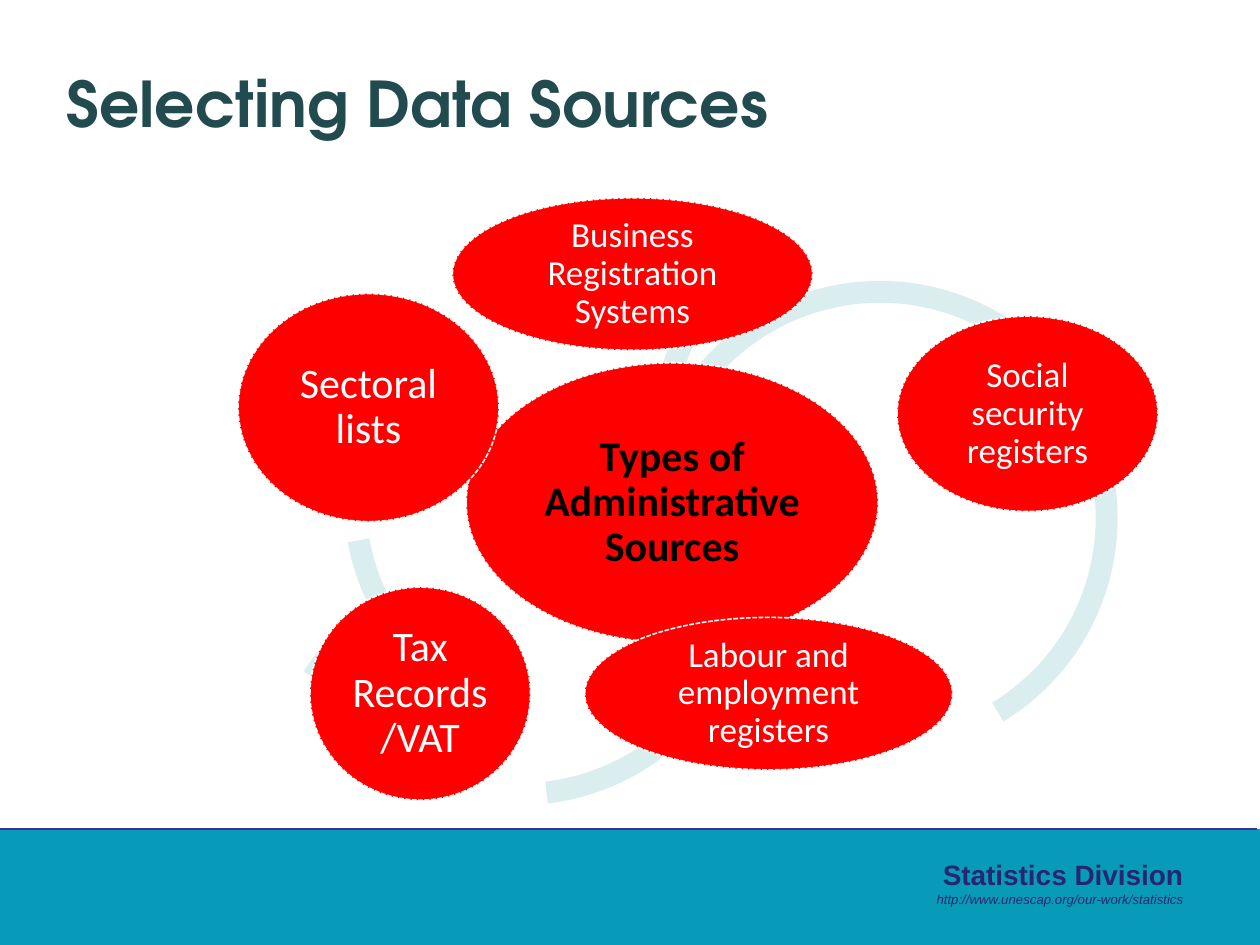
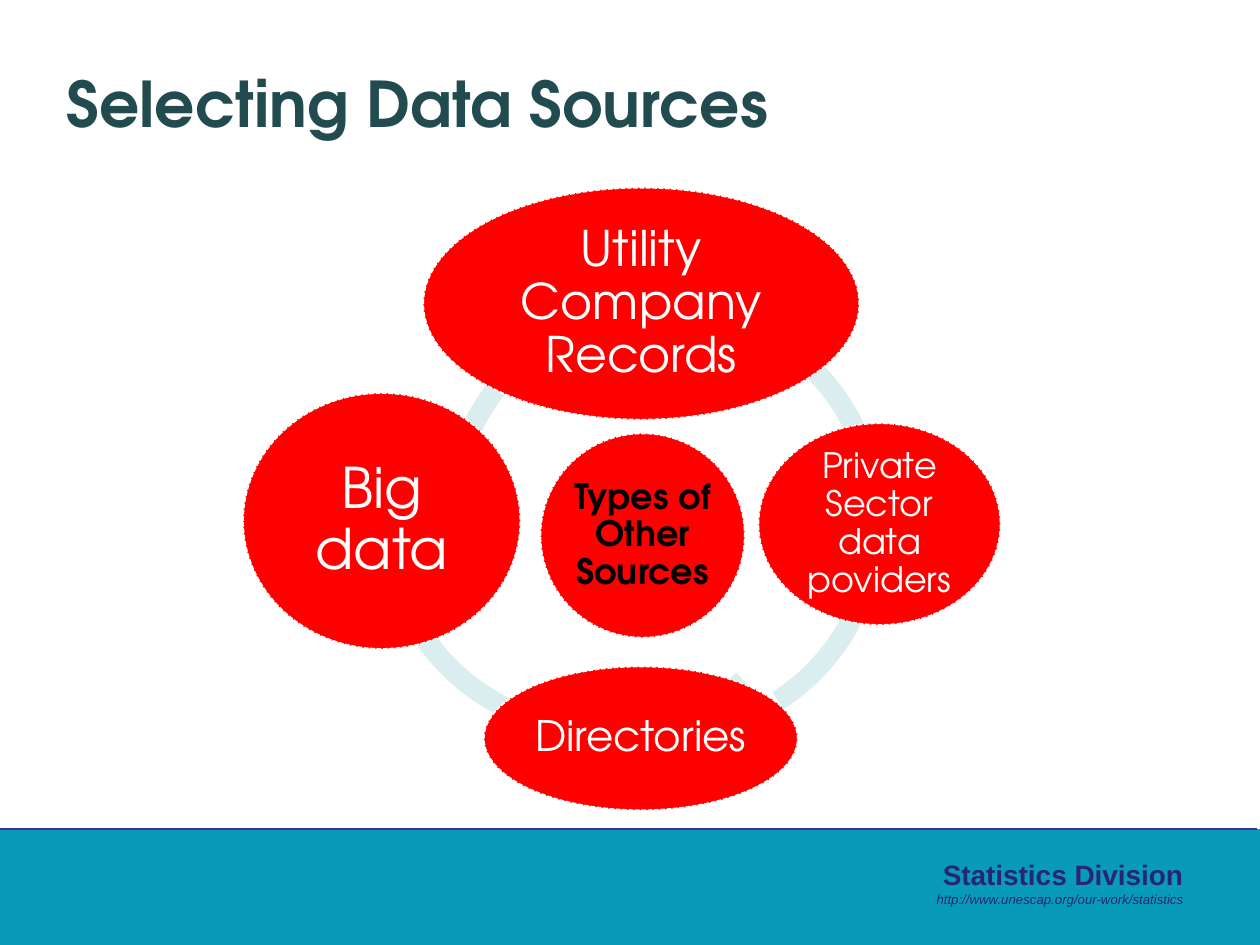
"""Build two slides of ringed ellipses showing types of data sources."""
import pptx
import pptx.dml.color
import pptx.enum.dml
import pptx.enum.shapes
import pptx.enum.text
import pptx.oxml.ns
import pptx.util
from lxml import etree
from pptx.util import Inches

ALIGN = pptx.enum.text.PP_ALIGN
ANCHOR = pptx.enum.text.MSO_ANCHOR
SHAPE = pptx.enum.shapes.MSO_SHAPE
TITLE_ONLY = 5
HEADING_FONT = "TeX Gyre Adventor"
BAND, RULE, FOOTER = "079BB9", "333399", "262673"
TITLE, RING, BUBBLE = "224B50", "DAEDEF", "FF0000"
WHITE, BLACK = "FFFFFF", "000000"
RING_THICKNESS = 0.046
DEGREE = 0.6
BAND_TOP = 6.58

TITLE_FORMAT = {"name": HEADING_FONT, "size": 36, "bold": True, "color": TITLE}
DIVISION_FORMAT = {"name": "Arial", "size": 16, "bold": True, "color": FOOTER}
ADDRESS_FORMAT = {"name": "Arial", "size": 7.5, "italic": True, "color": FOOTER}

ADMINISTRATIVE = {
    "font": "Calibri",
    "ring": 3.77,
    "arcs": [
        (2.73, 2.08, 122.08, 169.63),
        (1.61, 1.9, 78.58, 125.08),
        (2.24, 2.62, 24.8, 83.2),
        (5.1, 2.23, 208.61, 58.7),
        (5.17, 1.58, 135.03, 212.46),
    ],
    "hub": ("Types of Administrative Sources", 24, (3.7, 2.88, 3.27, 2.22)),
    "sources": [
        ("Business Registration Systems", 20, (3.59, 1.57, 2.86, 1.21)),
        ("Social security registers", 20, (7.12, 2.51, 2.07, 1.55)),
        ("Labour and employment registers", 20, (4.64, 4.9, 2.92, 1.21)),
        ("Tax Records/VAT", 24, (2.46, 4.66, 1.75, 1.69)),
        ("Sectoral lists", 24, (1.89, 2.33, 2.07, 1.81)),
    ],
}
OTHER = {
    "font": HEADING_FONT,
    "ring": 3.53,
    "arcs": [
        (2.99, 2.34, 107.37, 168.81),
        (2.99, 2.4, 47.19, 108.71),
        (3.5, 2.38, 0.25, 57.35),
        (3.5, 2.36, 158.65, 0.57),
    ],
    "hub": ("Types of Other Sources", 20, (4.29, 3.44, 1.62, 1.62)),
    "sources": [
        ("Utility Company Records", 28, (3.36, 1.49, 3.46, 1.84)),
        ("Private Sector data poviders", 20, (6.02, 3.36, 1.92, 1.6)),
        ("Directories", 24, (3.84, 5.29, 2.49, 1.14)),
        ("Big data", 32, (1.93, 3.12, 2.2, 2.03)),
    ],
}


def rgb(value):
    """Turn a hex string into a colour."""
    return pptx.dml.color.RGBColor.from_string(value)


def set_attributes(target, values):
    """Set each named attribute of the target."""
    for name, value in values.items():
        setattr(target, name, value)


def write(paragraph, text, style, align):
    """Put formatted text into a paragraph."""
    paragraph.text = text
    paragraph.alignment = align
    font = paragraph.runs[0].font
    values = dict(style, size=pptx.util.Pt(style["size"]))
    font.color.rgb = rgb(values.pop("color"))
    set_attributes(font, values)


def add_filled(slide, preset, box, fill):
    """Add a flat preset shape without an outline."""
    shape = slide.shapes.add_shape(preset, *map(Inches, box))
    shape.shadow.inherit = False
    shape.fill.solid()
    shape.fill.fore_color.rgb = rgb(fill)
    shape.line.fill.background()
    return shape


def add_footer(slide):
    """Add the bottom band with its rule and the division's address."""
    add_filled(slide, SHAPE.RECTANGLE, (0, BAND_TOP, 10, 7.5 - BAND_TOP), BAND)
    rule = slide.shapes.add_connector(
        pptx.enum.shapes.MSO_CONNECTOR.STRAIGHT,
        Inches(0), Inches(BAND_TOP), Inches(9.98), Inches(BAND_TOP))
    rule.line.color.rgb = rgb(RULE)
    rule.line.width = pptx.util.Pt(0.75)
    properties = rule._element.spPr
    etree.SubElement(properties, pptx.oxml.ns.qn("a:effectLst"))
    frame = slide.shapes.add_textbox(
        *map(Inches, (7.29, 6.76, 2.2, 0.5))).text_frame
    frame.word_wrap = True
    write(frame.paragraphs[0], "Statistics Division", DIVISION_FORMAT, ALIGN.RIGHT)
    write(frame.add_paragraph(), "http://www.unescap.org/our-work/statistics",
          ADDRESS_FORMAT, ALIGN.RIGHT)


def add_title(slide, text):
    """Place and format the slide title."""
    title = slide.shapes.title
    places = zip(("left", "top", "width", "height"),
                 map(Inches, (0.43, 0.42, 9.2, 0.79)))
    set_attributes(title, dict(places))
    set_attributes(title.text_frame, {
        "vertical_anchor": ANCHOR.MIDDLE,
        "auto_size": pptx.enum.text.MSO_AUTO_SIZE.NONE})
    write(title.text_frame.paragraphs[0], text, TITLE_FORMAT, ALIGN.LEFT)


def add_arc(slide, diameter, left, top, start, end):
    """Add one piece of the pale ring, with its angles in degrees."""
    arc = add_filled(slide, SHAPE.BLOCK_ARC, (left, top, diameter, diameter), RING)
    for index, value in enumerate((start * DEGREE, end * DEGREE, RING_THICKNESS)):
        arc.adjustments[index] = value


def add_bubble(slide, text, box, style):
    """Add a labelled ellipse with a dashed outline."""
    bubble = add_filled(slide, SHAPE.OVAL, box, BUBBLE)
    bubble.line.color.rgb = rgb(WHITE)
    set_attributes(bubble.line, {
        "width": pptx.util.Pt(0.9),
        "dash_style": pptx.enum.dml.MSO_LINE.SQUARE_DOT})
    frame = bubble.text_frame
    sides = ("margin_left", "margin_top", "margin_right", "margin_bottom")
    set_attributes(frame, dict.fromkeys(sides, Inches(0.03)))
    set_attributes(frame, {"word_wrap": True, "vertical_anchor": ANCHOR.MIDDLE})
    write(frame.paragraphs[0], text, style, ALIGN.CENTER)
    frame.paragraphs[0].line_spacing = 0.9


def add_sources_slide(deck, diagram):
    """Add a slide with a hub and the sources around it."""
    slide = deck.slides.add_slide(deck.slide_layouts[TITLE_ONLY])
    add_footer(slide)
    add_title(slide, "Selecting Data Sources")
    for arc in diagram["arcs"]:
        add_arc(slide, diagram["ring"], *arc)
    style = {"name": diagram["font"], "color": WHITE, "bold": False}
    text, size, box = diagram["hub"]
    add_bubble(slide, text, box, dict(style, size=size, color=BLACK, bold=True))
    for text, size, box in diagram["sources"]:
        add_bubble(slide, text, box, dict(style, size=size))


def main():
    """Build and save the deck."""
    deck = pptx.Presentation()
    set_attributes(deck, {"slide_width": Inches(10), "slide_height": Inches(7.5)})
    for diagram in (ADMINISTRATIVE, OTHER):
        add_sources_slide(deck, diagram)
    deck.save("out.pptx")


if __name__ == "__main__":
    main()
